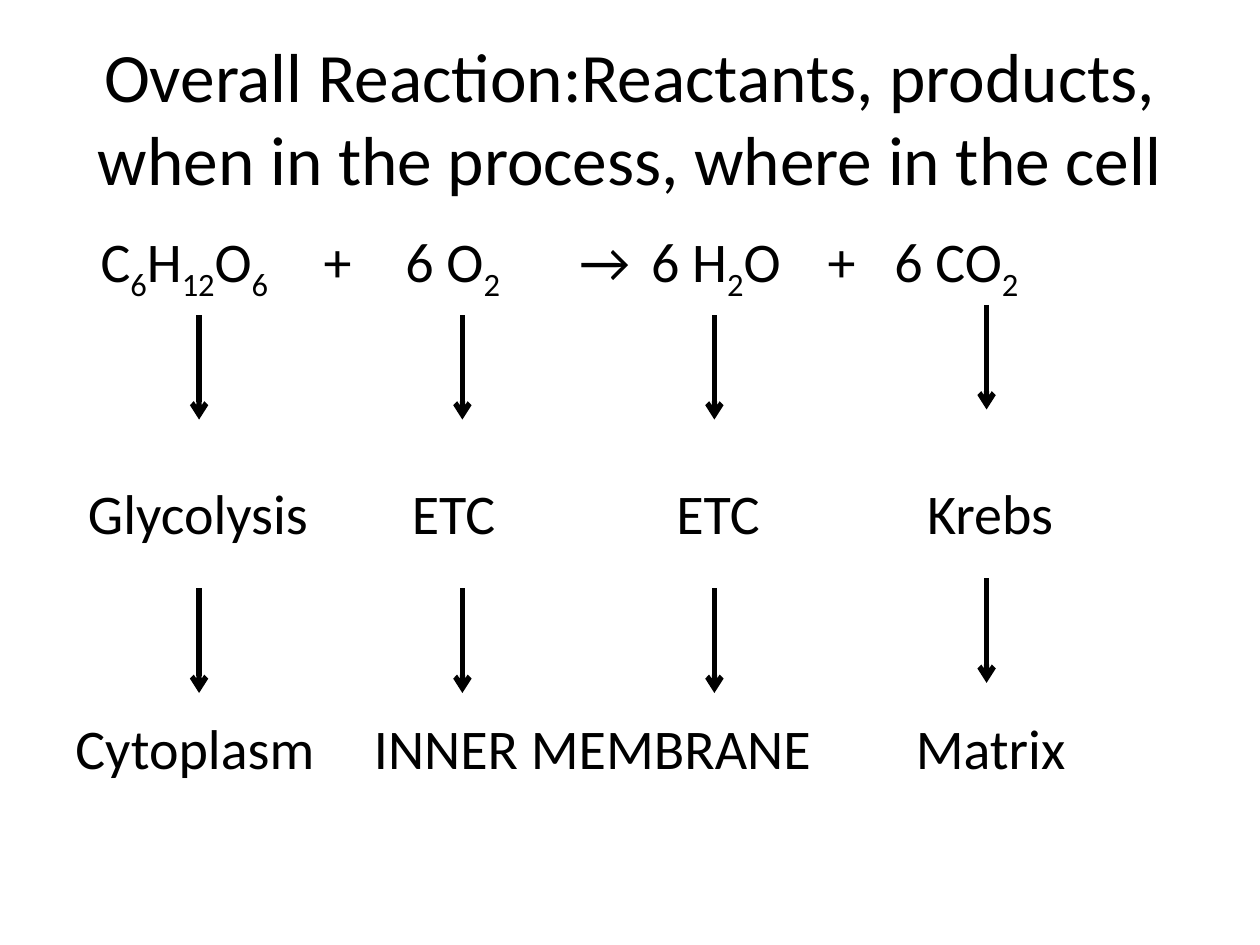
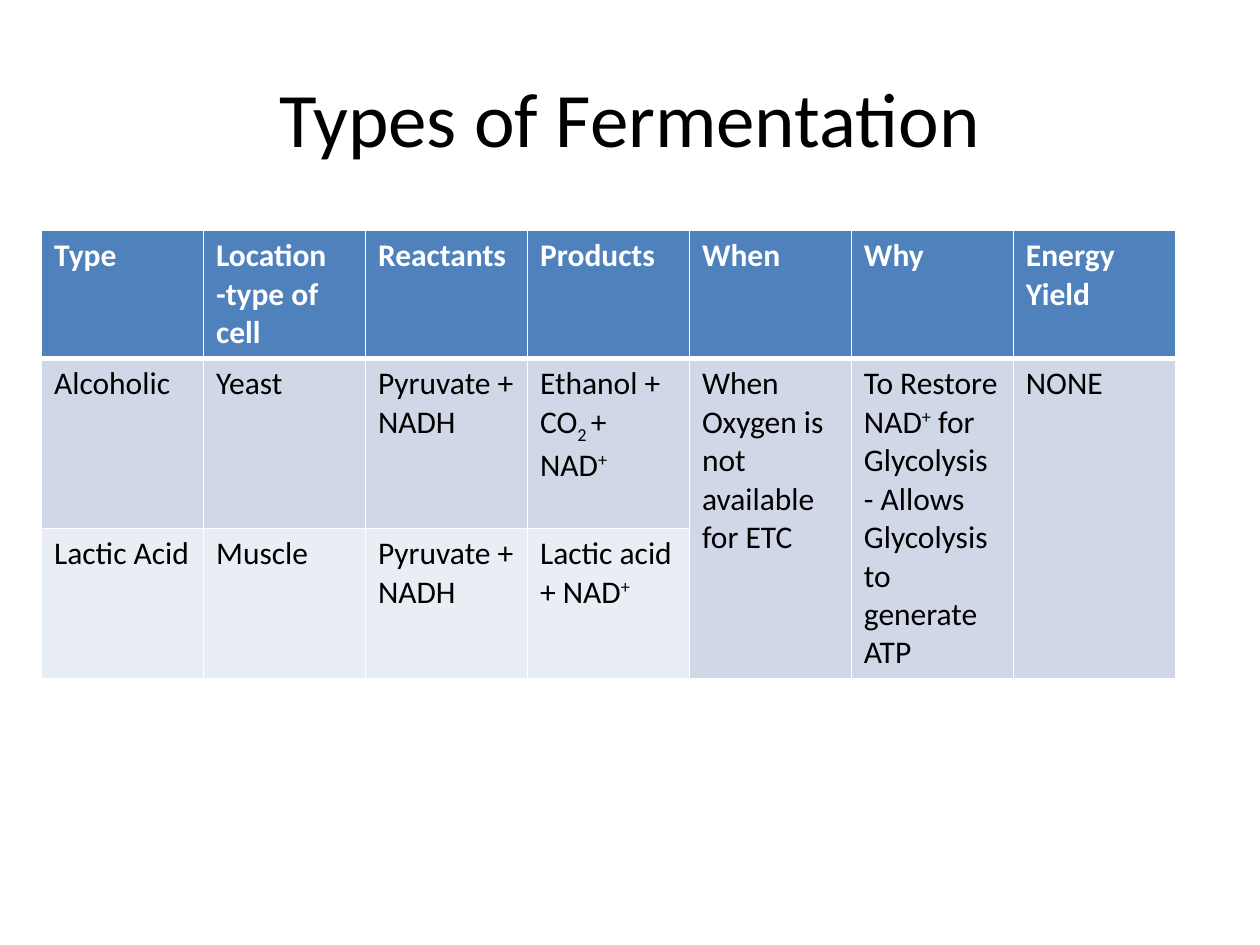
from pptx import Presentation, util as u
from pptx.dml.color import RGBColor
from pptx.enum import shapes, text
from pptx.oxml import parse_xml
from pptx.oxml.ns import nsdecls
from pptx.oxml.xmlchemy import OxmlElement

FONT = "Calibri"
COLOURS = {"ink": "000000", "paper": "FFFFFF", "header": "4F81BD",
           "band": "D0D8E8", "light band": "E9EDF4"}

deck = Presentation()
deck.slide_width, deck.slide_height = u.Inches(10), u.Inches(7.5)
title_only = deck.slide_layouts[5]


def write(frame, content, size, colour="ink", bold=False, align=None, gaps=(), tabs=()):
    """Fill a frame; lines are paragraphs, text between bars is sub- or superscript."""
    frame.word_wrap = True
    for row, line in enumerate(content.split("\n")):
        paragraph = frame.add_paragraph() if row else frame.paragraphs[0]
        paragraph.alignment = align
        if gaps:
            paragraph.space_before = u.Pt(gaps[row])
        if tabs:
            stops = "".join(f'<a:tab pos="{u.Inches(stop)}" algn="l"/>' for stop in tabs[row])
            paragraph._p.get_or_add_pPr().append(
                parse_xml(f'<a:tabLst {nsdecls("a")}>{stops}</a:tabLst>'))
        for index, piece in enumerate(line.split("|")):
            if not piece:
                continue
            run = paragraph.add_run()
            run.text = piece
            run.font.name, run.font.size, run.font.bold = FONT, u.Pt(size), bold
            run.font.color.rgb = RGBColor.from_string(COLOURS[colour])
            if index % 2:
                run.font._element.set("baseline", "30000" if piece == "+" else "-25000")


def titled_slide(heading, size):
    slide = deck.slides.add_slide(title_only)
    title = slide.shapes.title
    title.left, title.top = u.Inches(0.5), u.Inches(0.3)
    title.width, title.height = u.Inches(9), u.Inches(1.25)
    title.text_frame.vertical_anchor = text.MSO_ANCHOR.MIDDLE
    write(title.text_frame, heading, size, align=text.PP_ALIGN.CENTER)
    return slide


# Overall reaction: each substance leads to its stage, each stage to its place
reaction = titled_slide(
    "Overall Reaction:Reactants, products, when in the process, where in the cell", 39.6)
equation = reaction.shapes.add_textbox(
    u.Inches(0.5), u.Inches(1.75), u.Inches(9), u.Inches(4.95))
write(equation.text_frame,
      "\tC|6|H|12|O|6|\t+\t6 O|2|\t→\t6 H|2|O\t+\t6 CO|2|\n"
      "\tGlycolysis\tETC\tETC\tKrebs\n"
      "Cytoplasm\tINNER MEMBRANE\tMatrix",
      32, gaps=(0, 100, 96),
      tabs=((0.2, 1.97, 2.62, 4, 4.57, 5.97, 6.5),
            (0.1, 2.67, 4.77, 6.76),
            (2.37, 6.67)))

ARROW_LENGTH = 0.83
for arrow_row in (2.5, 4.67):
    for substance_x, lift in ((1.58, 0), (3.67, 0), (5.67, 0), (7.83, 0.08)):
        start = arrow_row - lift
        arrow = reaction.shapes.add_connector(
            shapes.MSO_CONNECTOR.STRAIGHT, u.Inches(substance_x), u.Inches(start),
            u.Inches(substance_x), u.Inches(start + ARROW_LENGTH))
        arrow.line.width = u.Pt(3)
        arrow.line.color.rgb = RGBColor.from_string(COLOURS["ink"])
        arrow.line._get_or_add_ln().append(
            parse_xml(f'<a:tailEnd {nsdecls("a")} type="arrow"/>'))
        arrow._element.spPr.append(OxmlElement("a:effectLst"))

# Types of fermentation
fermentation = titled_slide("Types of Fermentation", 44)
ROWS = [
    ["Type", "Location\n-type of cell", "Reactants", "Products", "When", "Why", "Energy Yield"],
    ["Alcoholic", "Yeast", "Pyruvate +\nNADH", "Ethanol + CO|2 |+ NAD|+|",
     "When Oxygen is not available for ETC",
     "To Restore NAD|+| for Glycolysis\n- Allows Glycolysis to generate ATP", "NONE"],
    ["Lactic Acid", "Muscle", "Pyruvate + NADH", "Lactic acid + NAD|+|", "", "", ""],
]
HEIGHTS = (1.01, 1.35, 1.18)
FIRST_SHARED_COLUMN = 4
types = fermentation.shapes.add_table(
    len(ROWS), len(ROWS[0]), u.Inches(0.33), u.Inches(1.83),
    u.Inches(9), u.Inches(sum(HEIGHTS))).table

for row, (entries, height, fill) in enumerate(
        zip(ROWS, HEIGHTS, ("header", "band", "light band"))):
    types.rows[row].height = u.Inches(height)
    for column, entry in enumerate(entries):
        cell = types.cell(row, column)
        edges = {"L": 1, "R": 1, "T": 3 if row == 1 else 1, "B": 3 if row == 0 else 1}
        for edge, weight in edges.items():
            cell._tc.get_or_add_tcPr().append(parse_xml(
                f'<a:ln{edge} {nsdecls("a")} w="{u.Pt(weight)}"><a:solidFill>'
                f'<a:srgbClr val="{COLOURS["paper"]}"/></a:solidFill></a:ln{edge}>'))
        shared = row and column >= FIRST_SHARED_COLUMN
        cell.fill.solid()
        cell.fill.fore_color.rgb = RGBColor.from_string(COLOURS["band" if shared else fill])
        write(cell.text_frame, entry, 18, "ink" if row else "paper", bold=row == 0)

for column in range(FIRST_SHARED_COLUMN, len(ROWS[0])):
    types.cell(1, column).merge(types.cell(2, column))

deck.save("out.pptx")
